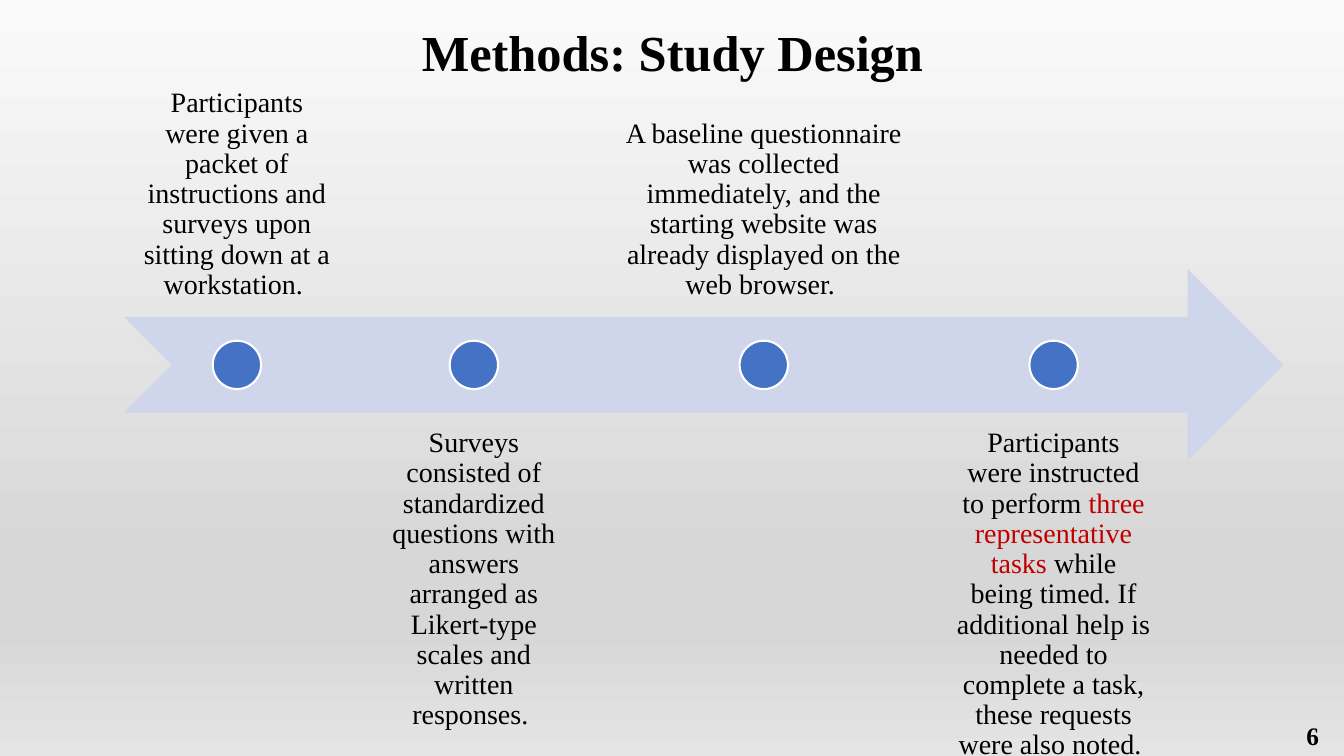
import copy
from dataclasses import dataclass

import pptx
import pptx.dml.color
import pptx.enum.shapes
import pptx.enum.text
import pptx.util
from pptx.util import Inches

ALIGN = pptx.enum.text.PP_ALIGN
ANCHOR = pptx.enum.text.MSO_ANCHOR
SHAPE = pptx.enum.shapes.MSO_SHAPE
FONT = "Times New Roman"
BLACK = "000000"
RED = "C00000"

ARROW_LEFT, ARROW_TOP, ARROW_WIDTH, ARROW_HEIGHT = 1.23, 2.67, 11.5, 1.9
TEXT_TOP_ABOVE, TEXT_TOP_BELOW = 1.24, 4.09
STEP_GAP = 0.11
DOT_SIZE = 0.48


@dataclass
class Run:
    text: str
    color: str = BLACK


@dataclass
class Step:
    width: float
    runs: list[Run]


BACKGROUND = [(0, "FAFAFA"), (0.74, "D7D7D7"), (0.83, "D7D7D7"), (1, "E4E4E4")]

STEPS = [
    Step(2.24, [Run("Participants were given a packet of instructions and surveys "
                    "upon sitting down at a workstation. ")]),
    Step(2.24, [Run("Surveys consisted of standardized questions with answers "
                    "arranged as Likert-type scales and written responses. ")]),
    Step(3.29, [Run("A baseline questionnaire was collected immediately, and the "
                    "starting website was already displayed on the web browser. ")]),
    Step(2.24, [Run("Participants were instructed to perform "),
                Run("three representative tasks ", RED),
                Run("while being timed. If additional help is needed to complete "
                    "a task, these requests were also noted. ")]),
]


def rgb(color: str) -> pptx.dml.color.RGBColor:
    return pptx.dml.color.RGBColor.from_string(color)


def fill_background(s: pptx.slide.Slide) -> None:
    fill = s.background.fill
    fill.gradient()
    fill.gradient_angle = 270
    first = s.element.find(".//" + pptx.oxml.ns.qn("a:gs"))
    for _ in range(len(BACKGROUND) - len(fill.gradient_stops)):
        first.addnext(copy.deepcopy(first))
    for stop, (position, color) in zip(fill.gradient_stops, BACKGROUND):
        stop.position = position
        stop.color.rgb = rgb(color)


def add_shape(s: pptx.slide.Slide, kind: SHAPE, left: float, top: float,
              width: float, height: float, color: str) -> pptx.shapes.autoshape.Shape:
    sp = s.shapes.add_shape(kind, Inches(left), Inches(top), Inches(width), Inches(height))
    sp.shadow.inherit = False
    sp.fill.solid()
    sp.fill.fore_color.rgb = rgb(color)
    sp.line.fill.background()
    return sp


def add_text(s: pptx.slide.Slide, left: float, top: float, width: float, height: float,
             runs: list[Run], size: int, align: ALIGN = ALIGN.CENTER,
             anchor: ANCHOR = ANCHOR.TOP, bold: bool = False,
             wrap: bool = True) -> pptx.text.text.TextFrame:
    sp = s.shapes.add_textbox(Inches(left), Inches(top), Inches(width), Inches(height))
    tf = sp.text_frame
    tf.word_wrap = wrap
    tf.vertical_anchor = anchor
    p = tf.paragraphs[0]
    p.alignment = align
    p.font.name = FONT
    p.font.size = pptx.util.Pt(size)
    p.font.bold = bold
    for run in runs:
        r = p.add_run()
        r.text = run.text
        r.font.color.rgb = rgb(run.color)
    return tf


def add_step(s: pptx.slide.Slide, step: Step, left: float, above: bool) -> None:
    top = TEXT_TOP_ABOVE if above else TEXT_TOP_BELOW
    tf = add_text(s, left, top, step.width, ARROW_HEIGHT, step.runs, 20,
                  anchor=ANCHOR.BOTTOM if above else ANCHOR.TOP)
    tf.margin_left = tf.margin_right = tf.margin_top = tf.margin_bottom = Inches(0.16)
    tf.paragraphs[0].line_spacing = 0.9
    dot = add_shape(s, SHAPE.OVAL, left + (step.width - DOT_SIZE) / 2,
                    ARROW_TOP + (ARROW_HEIGHT - DOT_SIZE) / 2, DOT_SIZE, DOT_SIZE, "4472C4")
    dot.line.color.rgb = rgb("FFFFFF")
    dot.line.width = pptx.util.Pt(1.5)


def main() -> None:
    prs = pptx.Presentation()
    prs.slide_width, prs.slide_height = Inches(13.33), Inches(7.5)
    s = prs.slides.add_slide(prs.slide_layouts[6])
    fill_background(s)
    add_shape(s, SHAPE.NOTCHED_RIGHT_ARROW, ARROW_LEFT, ARROW_TOP,
              ARROW_WIDTH, ARROW_HEIGHT, "CFD5EA")
    left = ARROW_LEFT
    for i, step in enumerate(STEPS):
        add_step(s, step, left, above=i % 2 == 0)
        left += step.width + STEP_GAP
    add_text(s, 4.06, 0.16, 5.22, 0.71, [Run("Methods: Study Design")], 36,
             bold=True, wrap=False)
    add_text(s, 10.18, 7.1, 3, 0.4, [Run("6")], 18, align=ALIGN.RIGHT,
             anchor=ANCHOR.MIDDLE, bold=True)
    prs.save("out.pptx")


if __name__ == "__main__":
    main()
